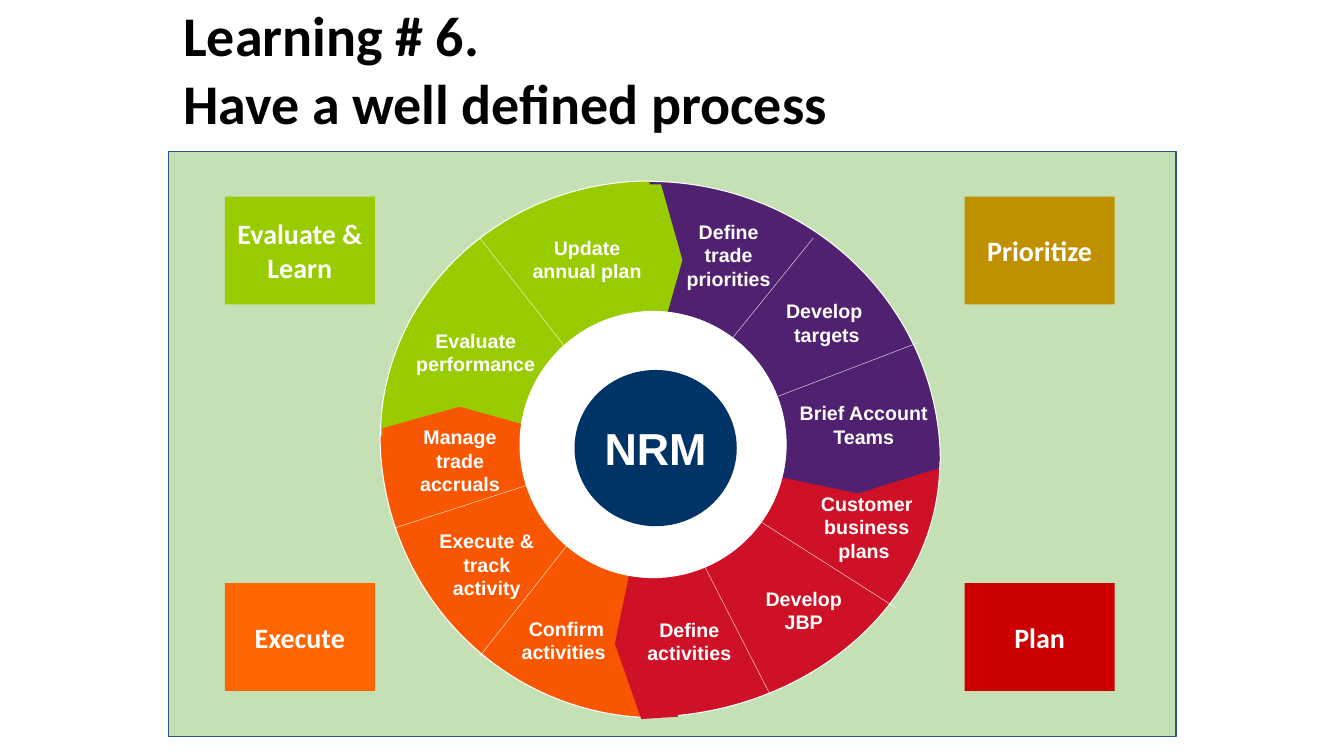
"""Build the NRM process wheel slide."""
from dataclasses import dataclass

from lxml.etree import SubElement
from pptx import Presentation
from pptx.dml.color import RGBColor
from pptx.enum.shapes import MSO_CONNECTOR, MSO_SHAPE
from pptx.enum.text import MSO_ANCHOR, MSO_AUTO_SIZE, PP_ALIGN
from pptx.oxml.ns import qn
from pptx.util import Cm, Pt


@dataclass(frozen=True)
class Theme:
    heading: str = "Calibri"
    body: str = "Arial"
    title_size: int = 40
    hub_size: int = 32
    corner_size: int = 20
    label_size: int = 14
    black: str = "000000"
    white: str = "FFFFFF"
    panel: str = "C5E0B4"
    border: str = "325491"
    navy: str = "003366"
    purple: str = "4F2170"
    red: str = "CE1126"
    orange: str = "F95602"
    green: str = "99CC00"
    gold: str = "BF9000"
    plan: str = "CC0000"
    execute: str = "FF6600"


T = Theme()
CM_PER_INCH = 2.54

TITLE = ["Learning # 6.", "Have a well defined process"]
TITLE_BOX = (1.72, -0.04, 9.89, 1.45)
PANEL_BOX = (1.67, 1.5, 10, 5.81)

QUADRANTS = [
    ((3.77, 1.5, 5.48, 5.62), 180, T.orange),
    ((3.55, 1.8, 5.78, 5.57), 0, T.purple),
    ((3.86, 1.65, 5.07, 5.86), 90, T.red),
    ((3.91, 1.66, 5.07, 5.34), 270, T.green),
]
CHEVRONS = [
    ((6.19, 1.83, 0.58, 1.5), 0, T.green),
    ((4.27, 3.56, 0.58, 1.53), 270, T.orange),
    ((6.1, 5.6, 0.58, 1.53), 176.2, T.red),
    ((8.21, 3.79, 0.58, 1.63), 87.2, T.purple),
]
CHEVRON_DEPTH = 0.365

SPOKE_START = (6.39, 4.44)
SPOKE_ENDS = [(8.07, 2.36), (9.11, 3.4), (8.89, 6.03), (7.64, 6.89),
              (4.76, 6.51), (3.91, 5.24), (4.76, 2.36)]

STEPS = [
    (["Define trade priorities"], (6.65, 2.13, 1.16, 0.81)),
    (["Develop ", "targets"], (7.55, 2.92, 1.31, 0.57)),
    (["Brief Account Teams"], (7.81, 3.93, 1.52, 0.57)),
    (["Customer business plans "], (7.85, 4.83, 1.5, 0.81)),
    (["Develop JBP"], (7.39, 5.77, 1.17, 0.57)),
    (["Define activities"], (6.31, 6.08, 1.06, 0.57)),
    (["Confirm activities "], (4.98, 6.07, 1.28, 0.57)),
    (["Execute & track activity"], (4.18, 5.2, 1.3, 0.81)),
    (["Manage trade accruals"], (3.98, 4.17, 1.17, 0.81)),
    (["Evaluate performance"], (3.99, 3.21, 1.46, 0.57)),
    (["Update annual plan"], (5.13, 2.29, 1.39, 0.57)),
]

RING_BOX = (5.16, 3.09, 2.64, 2.64)
HUB_BOX = (5.7, 3.67, 1.61, 1.55)

CORNER_X = (2.23, 9.57)
CORNER_Y = (1.95, 5.785)
CORNER_SIZE = (1.49, 1.07)
CORNERS = [
    [("Evaluate & Learn", T.green), ("Prioritize", T.gold)],
    [("Execute", T.execute), ("Plan", T.plan)],
]


def lengths(values):
    return [Cm(v * CM_PER_INCH) for v in values]


def rgb(color):
    return RGBColor.from_string(color)


def add_shape(s, kind, box, fill, line=None, width=0.75, rotation=0):
    sp = s.shapes.add_shape(kind, *lengths(box))
    sp.shadow.inherit = False
    sp.rotation = rotation
    sp.fill.solid()
    sp.fill.fore_color.rgb = rgb(fill)
    if line:
        sp.line.color.rgb = rgb(line)
        sp.line.width = Pt(width)
    else:
        sp.line.fill.background()
    return sp


def write(tf, lines, font, size, color=T.white, align=PP_ALIGN.CENTER):
    tf.word_wrap = True
    for i, line in enumerate(lines):
        p = tf.paragraphs[0] if i == 0 else tf.add_paragraph()
        p.alignment = align
        r = p.add_run()
        r.text = line
        r.font.name = font
        r.font.size = Pt(size)
        r.font.bold = True
        r.font.color.rgb = rgb(color)


def add_text(s, box, lines, *style):
    tf = s.shapes.add_textbox(*lengths(box)).text_frame
    write(tf, lines, *style)
    tf.auto_size = MSO_AUTO_SIZE.SHAPE_TO_FIT_TEXT


def add_spoke(s, end):
    line = s.shapes.add_connector(MSO_CONNECTOR.STRAIGHT, *lengths(SPOKE_START + end))
    line.line.color.rgb = rgb(T.white)
    line.line.width = Pt(0.25)
    SubElement(line._element.spPr, qn("a:effectLst"))


def add_wheel(s):
    for box, rotation, color in QUADRANTS:
        add_shape(s, MSO_SHAPE.ARC, box, color, T.white, rotation=rotation)
    for box, rotation, color in CHEVRONS:
        sp = add_shape(s, MSO_SHAPE.CHEVRON, box, color, rotation=rotation)
        sp.adjustments[0] = CHEVRON_DEPTH
    for end in SPOKE_ENDS:
        add_spoke(s, end)
    for lines, box in STEPS:
        add_text(s, box, lines, T.body, T.label_size)
    add_shape(s, MSO_SHAPE.OVAL, RING_BOX, T.white, T.white)
    tf = add_shape(s, MSO_SHAPE.OVAL, HUB_BOX, T.navy).text_frame
    tf.margin_left = tf.margin_right = tf.margin_top = tf.margin_bottom = 0
    tf.vertical_anchor = MSO_ANCHOR.MIDDLE
    write(tf, ["NRM"], T.body, T.hub_size)


def add_corners(s):
    for y, row in zip(CORNER_Y, CORNERS):
        for x, (name, color) in zip(CORNER_X, row):
            tf = add_shape(s, MSO_SHAPE.RECTANGLE, (x, y) + CORNER_SIZE, color).text_frame
            tf.vertical_anchor = MSO_ANCHOR.MIDDLE
            write(tf, [name], T.heading, T.corner_size)


def main():
    prs = Presentation()
    prs.slide_width, prs.slide_height = Cm(33.87), Cm(19.05)
    s = prs.slides.add_slide(prs.slide_layouts[6])
    add_shape(s, MSO_SHAPE.RECTANGLE, PANEL_BOX, T.panel, T.border, 1)
    add_text(s, TITLE_BOX, TITLE, T.heading, T.title_size, T.black, PP_ALIGN.LEFT)
    add_wheel(s)
    add_corners(s)
    prs.save("out.pptx")


if __name__ == "__main__":
    main()
